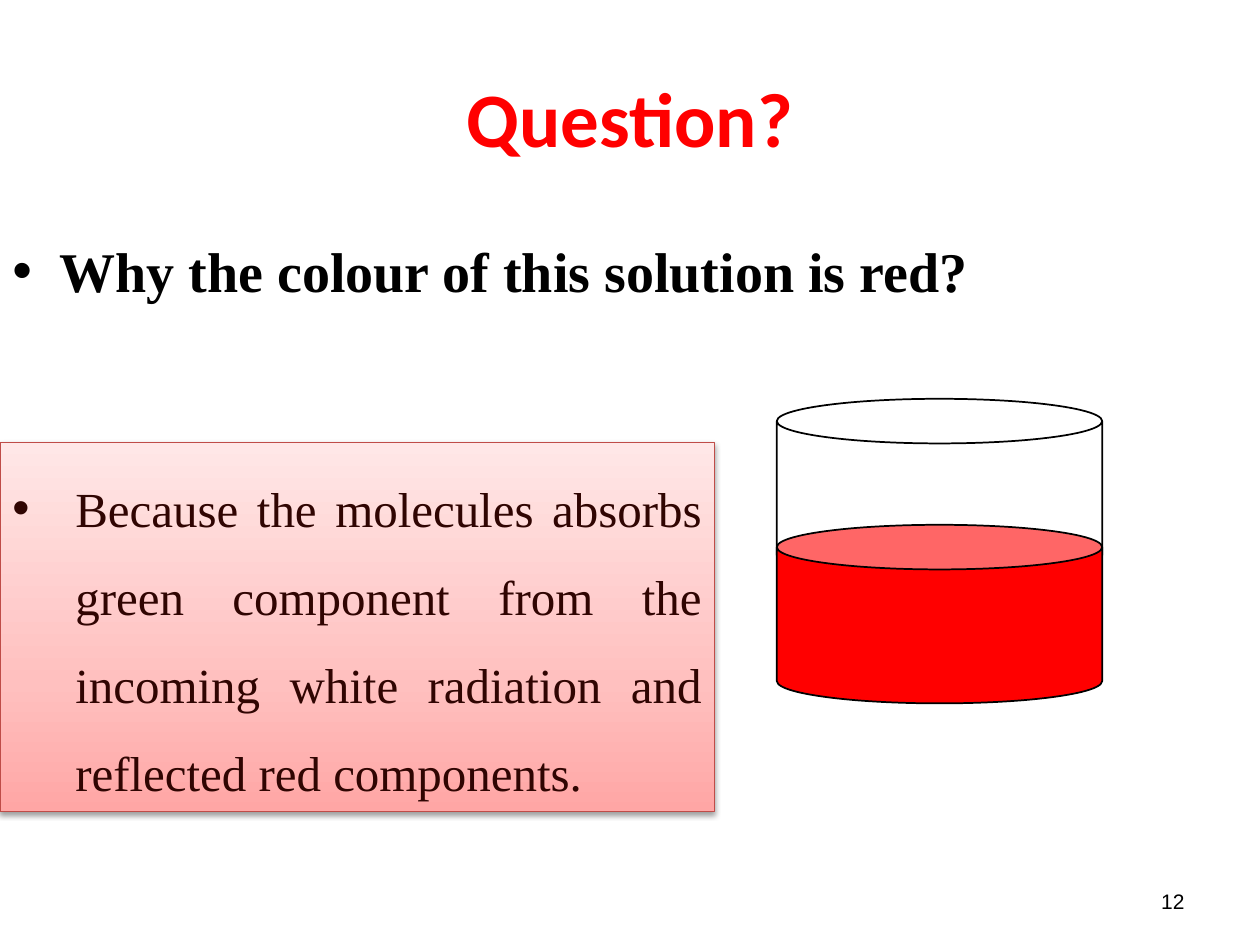
from dataclasses import dataclass
from typing import Any, Optional

import lxml.etree
import pptx
import pptx.dml.color
import pptx.enum.shapes
import pptx.enum.text
import pptx.oxml
import pptx.oxml.ns
import pptx.util

Cm = pptx.util.Cm
Pt = pptx.util.Pt
ALIGN = pptx.enum.text.PP_ALIGN
ANCHOR = pptx.enum.text.MSO_ANCHOR
SHAPE = pptx.enum.shapes.MSO_SHAPE
qn = pptx.oxml.ns.qn


@dataclass
class Box:
    left: float
    top: float
    width: float
    height: float

    def lengths(self) -> list[Any]:
        return [Cm(v) for v in (self.left, self.top, self.width, self.height)]


@dataclass
class Passage:
    words: str
    font: dict[str, Any]
    color: str
    paragraph: dict[str, Any]
    anchor: Any = ANCHOR.TOP
    indent: Optional[float] = None


@dataclass
class Beaker:
    box: Box
    fill: Optional[str]


def rgb(value: str) -> pptx.dml.color.RGBColor:
    return pptx.dml.color.RGBColor.from_string(value)


def apply(target: Any, values: dict[str, Any]) -> None:
    for name, value in values.items():
        setattr(target, name, value)


def add_bullet(paragraph: Any, indent: float) -> None:
    properties = paragraph._p.get_or_add_pPr()
    properties.set("marL", str(Cm(indent)))
    properties.set("indent", str(-Cm(indent)))
    lxml.etree.SubElement(properties, qn("a:buFont")).set("typeface", "Arial")
    lxml.etree.SubElement(properties, qn("a:buChar")).set("char", "•")


def write(shape: Any, passage: Passage) -> None:
    frame = shape.text_frame
    apply(frame, {"word_wrap": True, "vertical_anchor": passage.anchor})
    paragraph = frame.paragraphs[0]
    apply(paragraph, passage.paragraph)
    if passage.indent is not None:
        add_bullet(paragraph, passage.indent)
    run = paragraph.add_run()
    run.text = passage.words
    apply(run.font, passage.font)
    run.font.color.rgb = rgb(passage.color)


def add_text(slide: Any, box: Box, passage: Passage) -> None:
    write(slide.shapes.add_textbox(*box.lengths()), passage)


def add_beaker(slide: Any, beaker: Beaker) -> None:
    can = slide.shapes.add_shape(SHAPE.CAN, *beaker.box.lengths())
    can.shadow.inherit = False
    can.adjustments[0] = 0.25
    if beaker.fill is None:
        can.fill.background()
    else:
        can.fill.solid()
        can.fill.fore_color.rgb = rgb(beaker.fill)
    can.line.color.rgb = rgb("000000")
    can.line.width = Pt(1)


def shade(shape: Any, stops: list[tuple[int, str]], angle: int) -> None:
    shape.fill.gradient()
    shape.fill.gradient_angle = 360 - angle
    stop_list = shape._element.spPr.find(qn("a:gradFill")).find(qn("a:gsLst"))
    for stop in list(stop_list):
        stop_list.remove(stop)
    for position, color in stops:
        stop = lxml.etree.SubElement(stop_list, qn("a:gs"), pos=str(position * 1000))
        lxml.etree.SubElement(stop, qn("a:srgbClr"), val=color)


def cast_shadow(shape: Any, color: str, opacity: int, blur: float, distance: float) -> None:
    shape.shadow.inherit = False
    effects = shape._element.spPr.find(qn("a:effectLst"))
    shadow = lxml.etree.SubElement(
        effects, qn("a:outerShdw"), blurRad=str(Pt(blur)), dist=str(Pt(distance)),
        dir=str(90 * 60000), rotWithShape="0")
    tint = lxml.etree.SubElement(shadow, qn("a:srgbClr"), val=color)
    lxml.etree.SubElement(tint, qn("a:alpha"), val=str(opacity * 1000))


def add_answer(slide: Any, box: Box, passage: Passage) -> None:
    answer = slide.shapes.add_shape(SHAPE.RECTANGLE, *box.lengths())
    shade(answer, [(0, "FFA6A5"), (35, "FFC0BF"), (100, "FFE7E7")], 270)
    answer.line.color.rgb = rgb("BF4C48")
    answer.line.width = Pt(0.75)
    cast_shadow(answer, "000000", 38, 3.1, 1.6)
    write(answer, passage)


def main() -> None:
    deck = pptx.Presentation()
    apply(deck, {"slide_width": Cm(25.4), "slide_height": Cm(19.05)})
    slide = deck.slides.add_slide(deck.slide_layouts[6])

    add_text(slide, Box(1.27, 0.76, 22.86, 3.18), Passage(
        "Question?", {"name": "Calibri", "size": Pt(44), "bold": True}, "FF0000",
        {"alignment": ALIGN.CENTER}, ANCHOR.MIDDLE))
    add_text(slide, Box(0, 4.65, 25.4, 2.95), Passage(
        "Why the colour of this solution is red?",
        {"name": "Times New Roman", "size": Pt(32), "bold": True}, "000000",
        {"alignment": ALIGN.LEFT}, indent=0.95))
    add_text(slide, Box(18.2, 17.66, 5.93, 1.01), Passage(
        "12", {"name": "Arial", "size": Pt(12)}, "000000",
        {"alignment": ALIGN.RIGHT}, ANCHOR.MIDDLE))

    for beaker in (Beaker(Box(15.66, 8.04, 6.56, 3.6), None),
                   Beaker(Box(15.66, 10.58, 6.56, 3.6), "FF0000")):
        add_beaker(slide, beaker)

    add_answer(slide, Box(0, 8.92, 14.4, 7.44), Passage(
        "Because the molecules absorbs green component from the incoming white "
        "radiation and reflected red components.",
        {"name": "Times New Roman", "size": Pt(28)}, "300502",
        {"alignment": ALIGN.JUSTIFY, "line_spacing": 1.5}, indent=1.27))

    deck.save("out.pptx")


if __name__ == "__main__":
    main()
